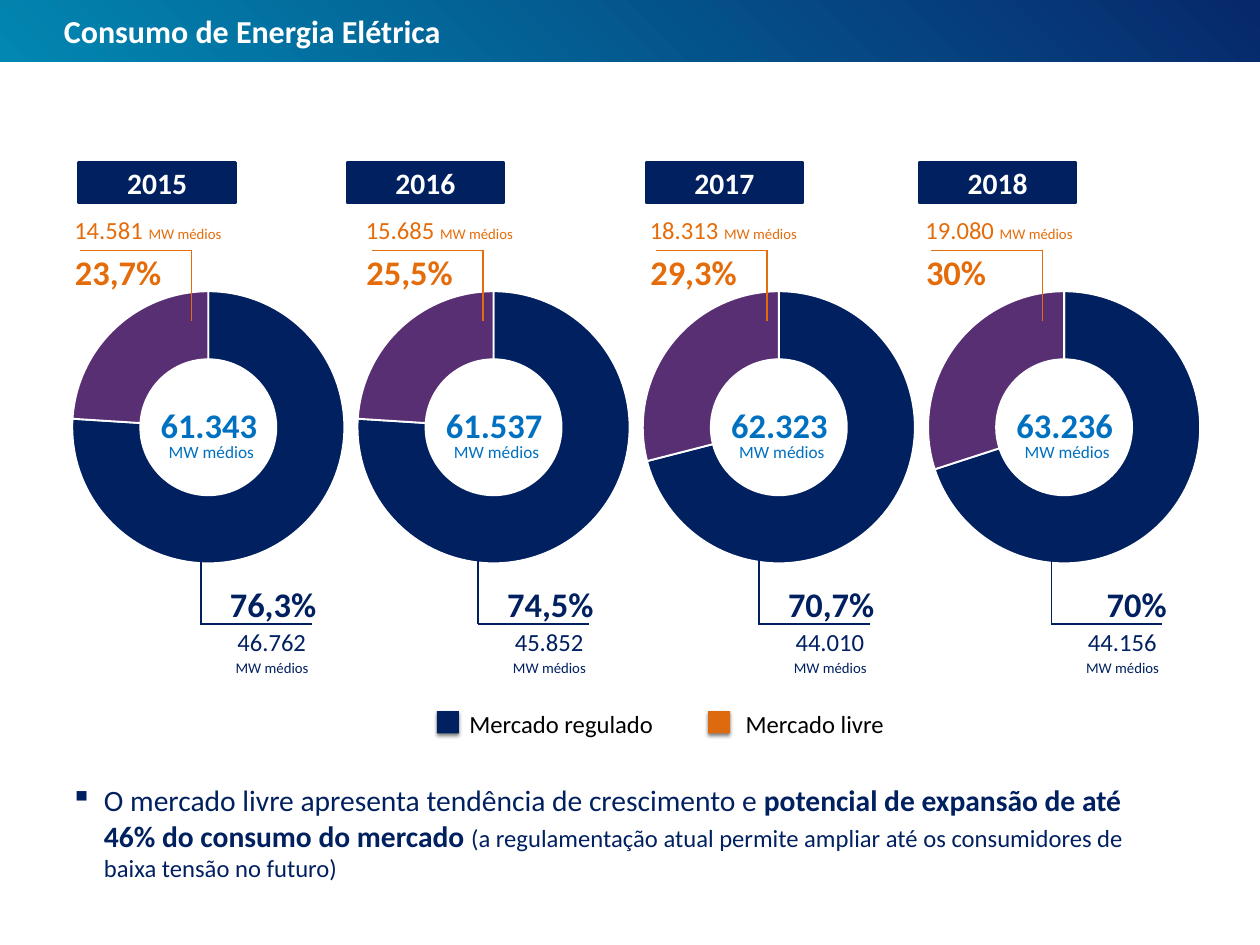
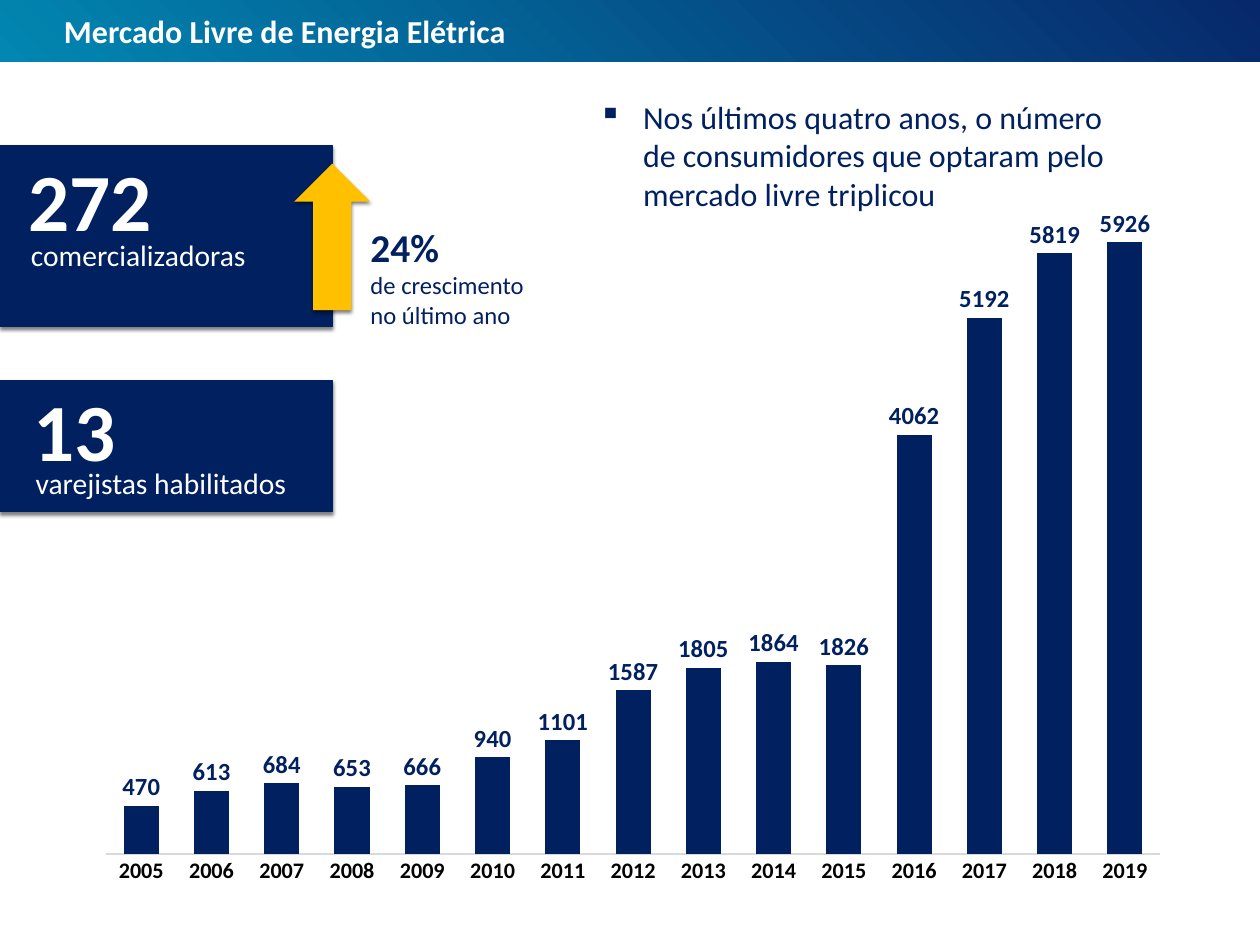
"""Builds two slides on electricity consumption and the free energy market."""
from lxml import etree
from pptx import Presentation
from pptx.chart.data import CategoryChartData
from pptx.dml.color import RGBColor as RGB
from pptx.enum.chart import XL_CHART_TYPE as CT, XL_LABEL_POSITION as LP, XL_TICK_MARK as TM
from pptx.enum.shapes import MSO_CONNECTOR as CON, MSO_SHAPE as SHP
from pptx.enum.text import MSO_ANCHOR as ANC, PP_ALIGN as AL
from pptx.oxml.ns import qn
from pptx.util import Pt


class Theme:
    font = "Calibri"
    navy, purple, orange = RGB(0, 0x20, 0x60), RGB(0x59, 0x2F, 0x74), RGB(0xE4, 0x6C, 0x0A)
    blue, amber, legend = RGB(0, 0x70, 0xC0), RGB(0xFF, 0xC0, 0), RGB(0xDE, 0x6A, 0x10)
    white, black, axis = RGB(255, 255, 255), RGB(0, 0, 0), RGB(0xD9, 0xD9, 0xD9)
    band = RGB(0x07, 0x28, 0x6B), RGB(0x01, 0x87, 0xB1)
    huge, big, pct, title, body = 66, 32, 28, 26, 24
    value, axis_label, unit, small = 20, 18, 14, 12


def text(s, runs, x, y, w, h, size=Theme.body, color=Theme.navy, bold=False, align=AL.LEFT,
         anchor=ANC.TOP, inset=(7.2, 3.6), indent=0):
    """Adds a text box; runs is a string or a list of paragraphs of (text, size, bold)."""
    tf = s.shapes.add_textbox(Pt(x), Pt(y), Pt(w), Pt(h)).text_frame
    tf.word_wrap, tf.vertical_anchor = True, anchor
    tf.margin_left = tf.margin_right = Pt(inset[0])
    tf.margin_top = tf.margin_bottom = Pt(inset[1])
    paragraphs = [[(runs, size, bold)]] if isinstance(runs, str) else runs
    for i, parts in enumerate(paragraphs):
        p = tf.add_paragraph() if i else tf.paragraphs[0]
        p.alignment = align
        if indent:
            pPr = p._p.get_or_add_pPr()
            pPr.set("marL", str(Pt(indent)))
            pPr.set("indent", str(-Pt(indent)))
            etree.SubElement(pPr, qn("a:buChar"), char="▪")
        for content, pt, strong in parts:
            r = p.add_run()
            r.text = content
            r.font.name, r.font.size, r.font.bold = Theme.font, Pt(pt), strong
            r.font.color.rgb = color


def box(s, x, y, w, h, fill, line=0, kind=SHP.RECTANGLE, raised=False):
    """Adds a filled shape, with an optional outline width and drop shadow."""
    sp = s.shapes.add_shape(kind, Pt(x), Pt(y), Pt(w), Pt(h))
    sp.shadow.inherit = False
    sp.fill.solid()
    sp.fill.fore_color.rgb = fill
    if line:
        sp.line.color.rgb, sp.line.width = fill, Pt(line)
    else:
        sp.line.fill.background()
    if raised:
        shadow = etree.SubElement(sp.element.spPr.find(qn("a:effectLst")), qn("a:outerShdw"),
                                  blurRad=str(Pt(3)), dist=str(Pt(2)), dir="5400000", rotWithShape="0")
        tint = etree.SubElement(shadow, qn("a:srgbClr"), val="000000")
        etree.SubElement(tint, qn("a:alpha"), val="50000")
    return sp


T = Theme
prs = Presentation()
prs.slide_width, prs.slide_height = Pt(1024), Pt(768)

slides = []
for title in ("Consumo de Energia Elétrica", "Mercado Livre de Energia Elétrica"):
    s = prs.slides.add_slide(prs.slide_layouts[6])
    band = box(s, 0, 0, 1024, 50, T.navy)
    band.fill.gradient()
    band.fill.gradient_angle = 225
    for stop, color, position in zip(band.fill.gradient_stops, T.band, (0, 1)):
        stop.color.rgb, stop.position = color, position
    text(s, title, 49, 0, 975, 50, T.title, T.white, True, anchor=ANC.MIDDLE, inset=(3, 3))
    slides.append(s)
consumption, market = slides
plots = []

years = [
    ("2015", 64, "61.343", 53.3, "14.581", "23,7%", 163.4, "46.762", "76,3%", 24),
    ("2016", 282, "61.537", 290.2, "15.685", "25,5%", 388.8, "45.852", "74,5%", 24),
    ("2017", 525, "62.323", 521, "18.313", "29,3%", 617, "44.010", "70,7%", 29),
    ("2018", 747, "63.236", 745, "19.080", "30%", 854.6, "44.156", "70%", 30),
]
s, unit = consumption, "MW médios"
for i, (year, badge_x, total, fx, free, free_pct, rx, regulated, reg_pct, share) in enumerate(years):
    x = 49 + i * 231.84
    data = CategoryChartData()
    data.categories = ["1", "2"]
    data.add_series("Series 1", (100 - share, share))
    chart = s.shapes.add_chart(CT.DOUGHNUT, Pt(x), Pt(178.5), Pt(243), Pt(341), data).chart
    chart.has_legend = chart.has_title = False
    chart.font.name, chart.font.size = T.font, Pt(10)
    chart.plots[0].vary_by_categories = True
    for n, color in enumerate((T.navy, T.purple)):
        fmt = chart.plots[0].series[0].points[n].format
        fmt.fill.solid()
        fmt.fill.fore_color.rgb = color
        fmt.line.color.rgb, fmt.line.width = T.white, Pt(1.5)
    plots.append((chart, (0.04, 0.17, 0.91, 0.65)))

    badge = box(s, badge_x, 132, 127.5, 33, T.navy, 2)
    text(s, year, badge_x, 132, 127.5, 33, T.body, T.white, True, AL.CENTER, ANC.MIDDLE)

    text(s, free, fx, 171, 80, 32, T.value, T.orange)
    text(s, unit, fx + 60.4, 179.5, 80, 22, T.small, T.orange)
    text(s, free_pct, fx + 0.5, 200.5, 95, 41, T.pct, T.orange, True)
    text(s, total, x + 74.5, 324.7, 100, 41, T.pct, T.blue, True)
    text(s, unit, x + 81, 354.7, 95, 25, T.unit, T.blue)
    text(s, reg_pct, rx + 0.6, 470.5, 100, 41, T.pct, T.navy, True, AL.RIGHT)
    text(s, regulated, rx + 22.5, 506.3, 80, 32, T.value)
    text(s, unit, rx + 21, 531.7, 85, 22, T.small)

    for x1, y1, x2, y2, color in (
            (fx + 12, 203.6, fx + 103, 203.6, T.orange), (fx + 102.3, 203, fx + 102.3, 261, T.orange),
            (rx, 449.5, rx, 507.5, T.navy), (rx - 0.7, 507, rx + 90, 507, T.navy)):
        c = s.shapes.add_connector(CON.STRAIGHT, Pt(x1), Pt(y1), Pt(x2), Pt(y2))
        c.line.color.rgb, c.line.width = color, Pt(1.5)
        etree.SubElement(c.element.spPr, qn("a:effectLst"))

for key_x, label_x, color, label in ((355, 377, T.navy, "Mercado regulado"),
                                     (575.5, 601.5, T.legend, "Mercado livre")):
    box(s, key_x, 578, 18, 18, color, raised=True)
    text(s, label, label_x, 572, 180, 32, T.value, T.black, anchor=ANC.MIDDLE, inset=(4.5, 4.5))

text(s, [[("O mercado livre apresenta tendência de crescimento e ", T.body, False),
          ("potencial de expansão de até 46% do consumo do mercado ", T.body, True),
          ("(a regulamentação atual permite ampliar até os consumidores de baixa tensão no futuro)",
           T.value, False)]], 50.4, 632, 878, 90, indent=27)

s = market
data = CategoryChartData()
data.categories = [str(year) for year in range(2005, 2020)]
data.add_series("Series 1", (470, 613, 684, 653, 666, 940, 1101, 1587, 1805, 1864, 1826,
                             4062, 5192, 5819, 5926))
chart = s.shapes.add_chart(CT.COLUMN_CLUSTERED, Pt(77), Pt(66), Pt(931), Pt(675.5), data).chart
chart.has_legend = chart.has_title = False
chart.font.name, chart.font.size = T.font, Pt(T.unit)
plot = chart.plots[0]
plot.gap_width, plot.overlap, plot.vary_by_categories = 100, -24, False
bars = plot.series[0].format.fill
bars.solid()
bars.fore_color.rgb = T.navy
plot.has_data_labels = True
labels, cat_axis, val_axis = plot.data_labels, chart.category_axis, chart.value_axis
labels.show_value, labels.position = True, LP.OUTSIDE_END
for font, size, color in ((labels.font, T.value, T.navy),
                          (cat_axis.tick_labels.font, T.axis_label, T.black)):
    font.name, font.size, font.bold = T.font, Pt(size), True
    font.color.rgb = color
cat_axis.major_tick_mark = TM.NONE
cat_axis.format.line.color.rgb, cat_axis.format.line.width = T.axis, Pt(1)
val_axis.visible = val_axis.has_major_gridlines = False
val_axis.minimum_scale, val_axis.maximum_scale = 0, 7000
plots.append((chart, (0.01, 0.06, 0.92, 0.87)))

for y, h, number_x, number_y, number, label_y, label in (
        (118, 147.5, 18.7, 118, "272", 188, "comercializadoras"),
        (309, 106.5, 22.5, 304.5, "13", 373.7, "varejistas habilitados")):
    box(s, 0, y, 270, h, T.navy, 1, raised=True)
    text(s, number, number_x, number_y, 130, 88, T.huge, T.white, True, anchor=ANC.MIDDLE,
         inset=(4.5, 4.5))
    text(s, label, number_x + 2, label_y, 230, 37.5, T.body, T.white, anchor=ANC.MIDDLE,
         inset=(4.5, 4.5))

box(s, 239, 133, 62, 119, T.amber, kind=SHP.UP_ARROW, raised=True)
text(s, [[("24%", T.big, True)], [("de crescimento no último ano", T.value, False)]],
     296.6, 177, 142, 95, anchor=ANC.MIDDLE, inset=(4.5, 4.5))
text(s, "Nos últimos quatro anos, o número de consumidores que optaram pelo mercado livre triplicou",
     479.5, 75.6, 438.5, 101.5, T.title, indent=36)

for chart, frame in plots:
    area = chart.element.find(".//" + qn("c:plotArea"))
    layout = area.find(qn("c:layout"))
    if layout is None:
        layout = etree.Element(qn("c:layout"))
        area.insert(0, layout)
    manual = etree.SubElement(layout, qn("c:manualLayout"))
    settings = [("layoutTarget", "inner"), ("xMode", "edge"), ("yMode", "edge"), *zip("xywh", frame)]
    for tag, value in settings:
        etree.SubElement(manual, qn("c:" + tag), val=str(value))

prs.save("out.pptx")
